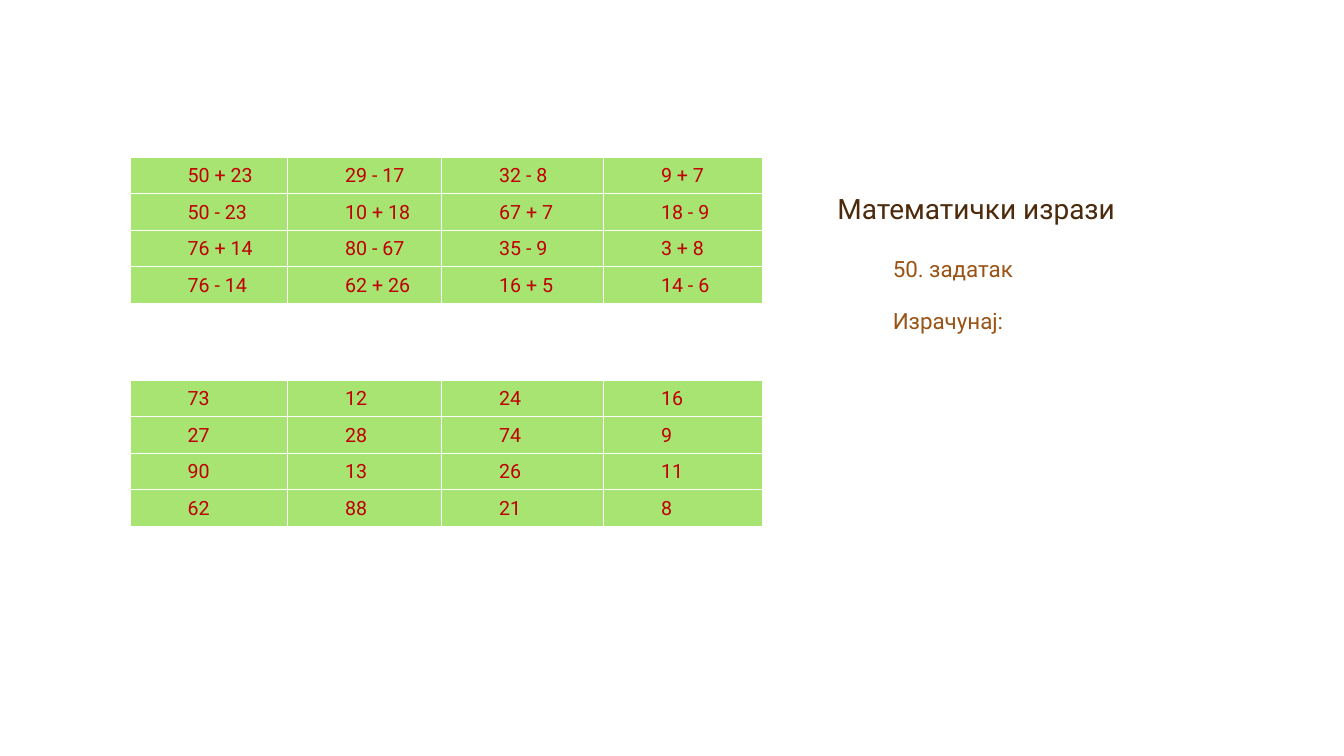
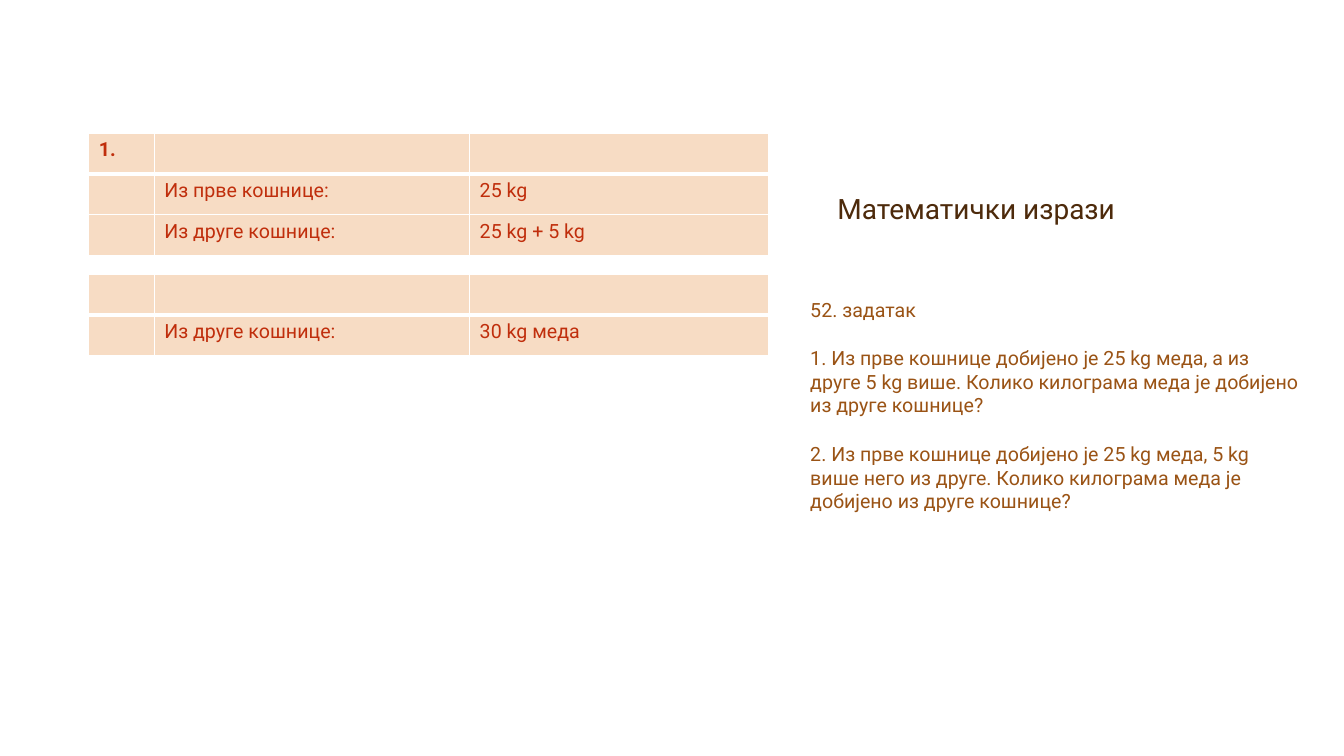
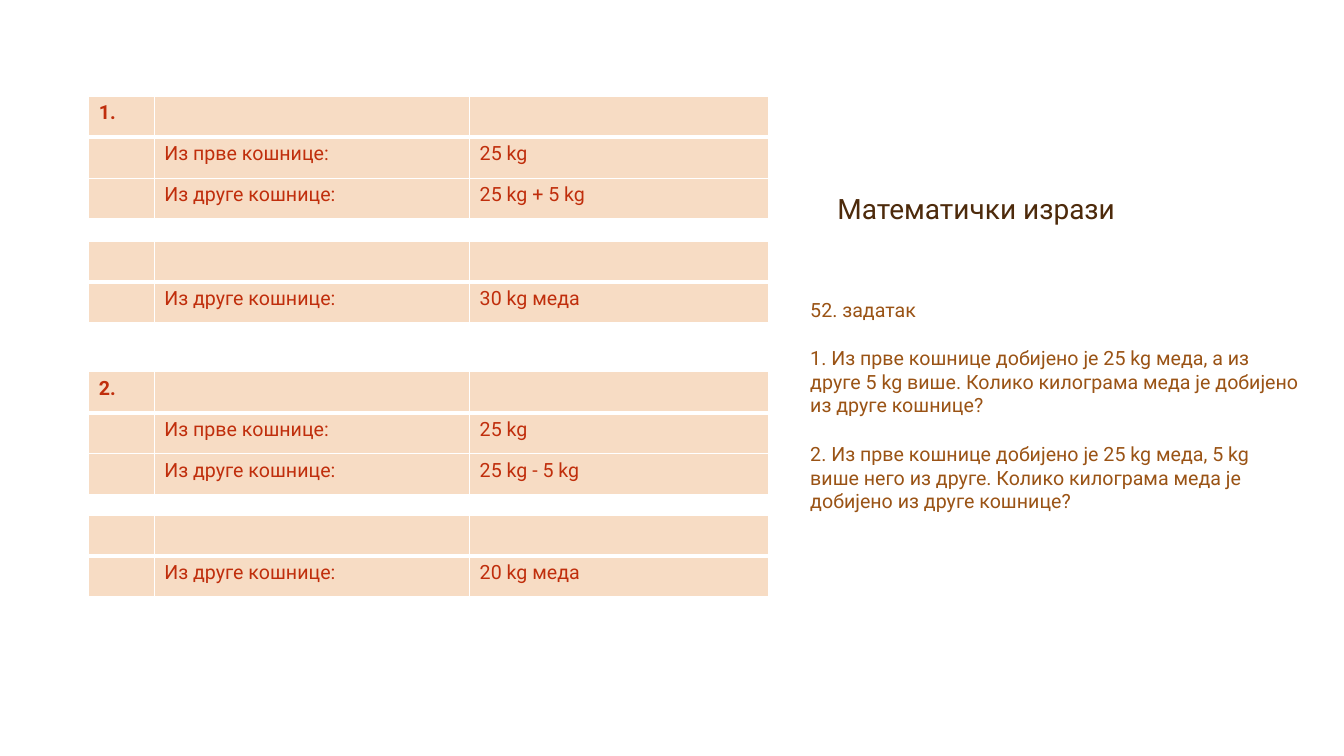
from dataclasses import dataclass

from lxml.etree import SubElement
from pptx import Presentation
from pptx.dml.color import RGBColor
from pptx.enum.text import MSO_ANCHOR as Anchor, MSO_AUTO_SIZE as AutoSize, PP_ALIGN as Align
from pptx.oxml.ns import qn
from pptx.util import Cm, Pt


@dataclass(frozen=True)
class Theme:
    font: str = "Roboto"
    title_ink: str = "4D2A0B"
    body_ink: str = "9A5315"
    border: str = "FFFFFF"
    title_size: int = 20
    task_size: int = 16
    text_size: int = 14
    paragraph_gap: int = 18


@dataclass(frozen=True)
class GridStyle:
    fill: str
    ink: str
    left: float
    columns: tuple
    row_height: float
    border: float
    header_border: float
    anchor: Anchor
    side_inset: float
    edge_inset: float
    indent: float = 0
    line_spacing: float = 1.0


SUMS = GridStyle("A7E472", "C00000", 3.28, (3.97, 3.88, 4.08, 3.99), 0.92,
                 0.5, 0.5, Anchor.MIDDLE, 0.18, 0, 1.27, 1.07)
HONEY = GridStyle("F7DCC4", "C02E0C", 2.24, (1.65, 7.95, 7.54), 1.03,
                  1, 3, Anchor.TOP, 0.25, 0.13)

FIRST_BASKET = "Из прве кошнице:"
SECOND_BASKET = "Из друге кошнице:"
EXPRESSIONS = [
    ("50 + 23", "29 - 17", "32 - 8", "9 + 7"),
    ("50 - 23", "10 + 18", "67 + 7", "18 - 9"),
    ("76 + 14", "80 - 67", "35 - 9", "3 + 8"),
    ("76 - 14", "62 + 26", "16 + 5", "14 - 6"),
]
RESULTS = [
    ("73", "12", "24", "16"),
    ("27", "28", "74", "9"),
    ("90", "13", "26", "11"),
    ("62", "88", "21", "8"),
]
HONEY_TASK = [
    "52. задатак",
    "1. Из прве кошнице добијено је 25 kg меда, а из друге 5 kg више. "
    "Колико килограма меда је добијено из друге кошнице?",
    "2. Из прве кошнице добијено је 25 kg меда, 5 kg више него из друге. "
    "Колико килограма меда је добијено из друге кошнице?",
]


class Lesson:
    """Builds the lesson slides in one shared style."""

    def __init__(self, theme):
        self.theme = theme
        self.deck = Presentation()
        self.deck.slide_width, self.deck.slide_height = Cm(33.87), Cm(19.05)
        self.page = None

    def add_page(self, title):
        self.page = self.deck.slides.add_slide(self.deck.slide_layouts[5])
        box = self.page.shapes.title
        box.left, box.top, box.width, box.height = Cm(20.85), Cm(3.96), Cm(9.12), Cm(1.85)
        frame = box.text_frame
        frame.auto_size = AutoSize.NONE
        frame.vertical_anchor = Anchor.BOTTOM
        para = frame.paragraphs[0]
        para.alignment = Align.LEFT
        para.line_spacing = 0.9
        self.add_span(para, title, self.theme.title_size, self.theme.title_ink)

    def add_span(self, para, text, size, ink, bold=False):
        span = para.add_run()
        span.text = text
        span.font.name = self.theme.font
        span.font.size = Pt(size)
        span.font.bold = bold
        span.font.color.rgb = RGBColor.from_string(ink)

    def add_body(self, lines, left, top, width, height, size):
        box = self.page.shapes.add_textbox(Cm(left), Cm(top), Cm(width), Cm(height))
        frame = box.text_frame
        frame.word_wrap = True
        for index, line in enumerate(lines):
            para = frame.add_paragraph() if index else frame.paragraphs[0]
            if index:
                para.space_before = Pt(self.theme.paragraph_gap)
            self.add_span(para, line, size, self.theme.body_ink)

    def add_grid(self, rows, top, style):
        frame = self.page.shapes.add_table(
            len(rows), len(style.columns), Cm(style.left), Cm(top),
            Cm(sum(style.columns)), Cm(style.row_height * len(rows)))
        table = frame.table
        table.first_row = table.horz_banding = False
        for column, width in zip(table.columns, style.columns):
            column.width = Cm(width)
        for row_index, texts in enumerate(rows):
            table.rows[row_index].height = Cm(style.row_height)
            for column_index, text in enumerate(texts):
                cell = table.cell(row_index, column_index)
                self.format_cell(cell, style, row_index)
                if text:
                    para = cell.text_frame.paragraphs[0]
                    para.line_spacing = style.line_spacing
                    if style.indent:
                        para._p.get_or_add_pPr().set("marL", str(Cm(style.indent)))
                    is_number = style is HONEY and column_index == 0
                    self.add_span(para, text, self.theme.text_size, style.ink, is_number)

    def format_cell(self, cell, style, row_index):
        cell.vertical_anchor = style.anchor
        cell.margin_left = cell.margin_right = Cm(style.side_inset)
        cell.margin_top = cell.margin_bottom = Cm(style.edge_inset)
        widths = {
            "lnL": style.border,
            "lnR": style.border,
            "lnT": style.header_border if row_index == 1 else style.border,
            "lnB": style.header_border if row_index == 0 else style.border,
        }
        properties = cell._tc.get_or_add_tcPr()
        for side, width in widths.items():
            line = SubElement(properties, qn(f"a:{side}"), w=str(Pt(width)))
            fill = SubElement(line, qn("a:solidFill"))
            SubElement(fill, qn("a:srgbClr"), val=self.theme.border)
        cell.fill.solid()
        cell.fill.fore_color.rgb = RGBColor.from_string(style.fill)

    def add_solution(self, number, expression, answer, given_top, answer_top):
        given = [(number, "", ""), ("", FIRST_BASKET, "25 kg"), ("", SECOND_BASKET, expression)]
        self.add_grid(given, given_top, HONEY)
        self.add_grid([("", "", ""), ("", SECOND_BASKET, answer)], answer_top, HONEY)


def main():
    theme = Theme()
    lesson = Lesson(theme)
    title = "Математички изрази"

    lesson.add_page(title)
    lesson.add_grid(EXPRESSIONS, 3.96, SUMS)
    lesson.add_body(["50. задатак", "Израчунај:"], 22.25, 6.3, 5.66, 2.69, theme.task_size)
    lesson.add_grid(RESULTS, 9.58, SUMS)

    more = ("1.", "25 kg + 5 kg", "30 kg меда")
    less = ("2.", "25 kg - 5 kg", "20 kg меда")
    solution_pages = [
        [(*more, 3.35, 6.91)],
        [(*more, 2.43, 6.08), (*less, 9.37, 12.98)],
    ]
    for solutions in solution_pages:
        lesson.add_page(title)
        lesson.add_body(HONEY_TASK, 20.17, 7.37, 12.83, 7.95, theme.text_size)
        for solution in solutions:
            lesson.add_solution(*solution)

    lesson.deck.save("out.pptx")


if __name__ == "__main__":
    main()
